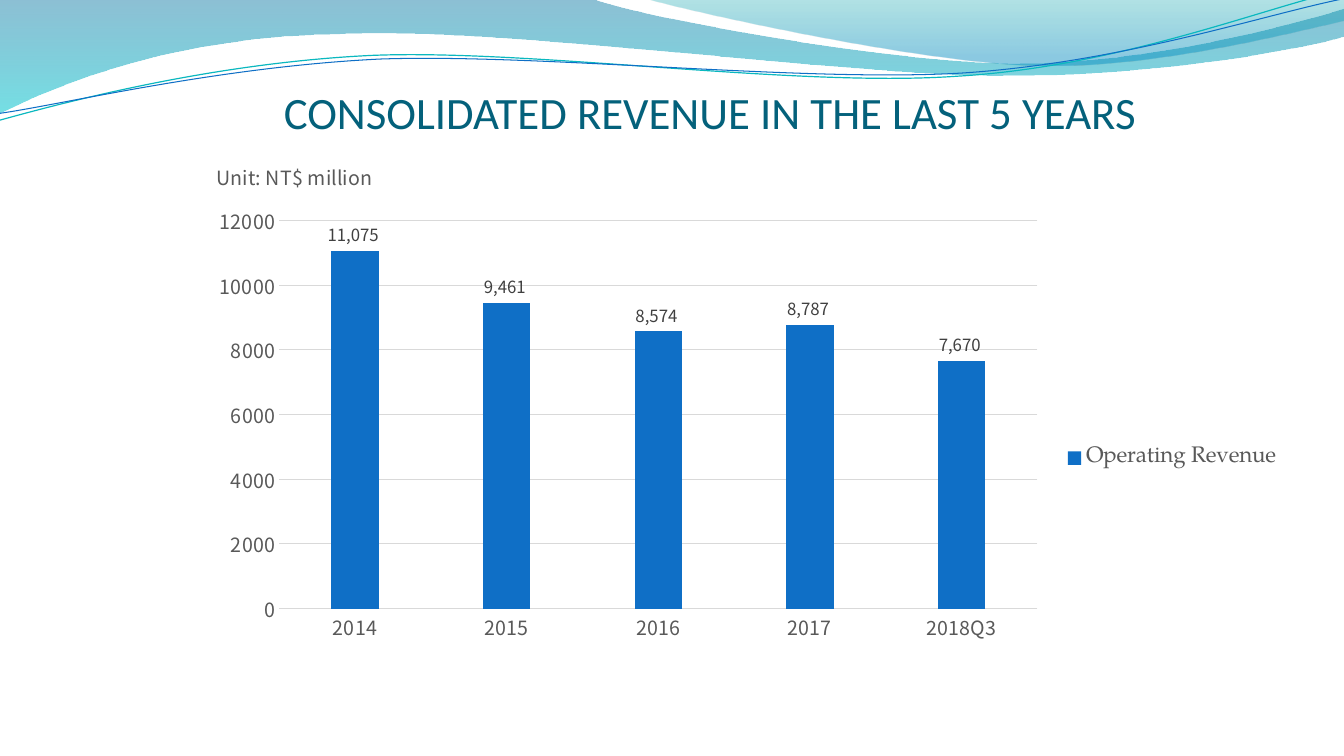
from lxml import etree
from pptx import Presentation
from pptx.chart.data import CategoryChartData
from pptx.dml.color import RGBColor
from pptx.enum.chart import XL_CHART_TYPE, XL_LABEL_POSITION, XL_LEGEND_POSITION, XL_TICK_MARK
from pptx.enum.text import MSO_ANCHOR, MSO_AUTO_SIZE, PP_ALIGN
from pptx.oxml.ns import qn
from pptx.util import Inches, Pt

CLUSTERED = XL_CHART_TYPE.COLUMN_CLUSTERED
OUTSIDE_END = XL_LABEL_POSITION.OUTSIDE_END
LEGEND_RIGHT = XL_LEGEND_POSITION.RIGHT
NO_TICK = XL_TICK_MARK.NONE
BOTTOM = MSO_ANCHOR.BOTTOM
NO_FIT = MSO_AUTO_SIZE.NONE
CENTER = PP_ALIGN.CENTER

COLUMN = ROW = Inches(1)
COLUMNS, ROWS = 13.33, 7.5
CHART_COLUMNS, CHART_ROWS = 10.84, 5.06
STRAND_ROTATION = 357.3

COLORS = {
    "title": "04617B", "bar": "0F6FC6", "text": "595959", "label": "404040",
    "grid": "D9D9D9", "black": "000000", "teal_line": "0AB8BF",
    "deep_blue": "0074A1", "aqua": "00C6CF", "teal": "00A1A9", "sky": "008BBF",
}
TITLE_FONT = "Calibri"
LABEL_FONT = "Noto Sans CJK SC"
LEGEND_FONT = "TeX Gyre Pagella"

REVENUE = {"2014": 11075, "2015": 9461, "2016": 8574, "2017": 8787, "2018Q3": 7670}

BANDS = [
    ((0, 0), [
        [(5.87, -0.01)],
        [(6.34, 0.17), (8.85, 0.63), (10.11, 0.63)],
        [(11.38, 0.63), (12.78, 0.26), (13.33, 0.09)],
        [(13.35, 0.36)],
        [(13.11, 0.44), (11.6, 0.76), (9.94, 0.75)],
        [(8.29, 0.75), (5.09, 0.28), (3.43, 0.34)],
        [(1.72, 0.36), (0.61, 0.83), (-0.01, 1.13)],
        [(0, 0)],
    ], [(0, "deep_blue", 45), (1, "aqua", 55)]),
    ((6.39, -0.01), [
        [(6.79, 0.11), (9.09, 0.62), (10.25, 0.65)],
        [(11.41, 0.69), (12.82, 0.32), (13.33, 0.21)],
        [(13.33, 0)],
        [(6.39, -0.01)],
    ], [(0, "teal", 30), (0.8, "sky", 45)]),
]
STRANDS = [
    ((-0.03, 0.88), [
        [(0.63, 0.73), (2.11, 0.41), (3.69, 0.41)],
        [(5.28, 0.42), (7.88, 0.93), (9.49, 0.89)],
        [(11.09, 0.87), (12.54, 0.36), (13.33, 0.22)],
    ], "teal_line", 0.85),
    ((-0.02, 0.81), [
        [(0.62, 0.75), (2.18, 0.45), (3.78, 0.45)],
        [(5.37, 0.47), (7.95, 0.88), (9.54, 0.86)],
        [(11.14, 0.83), (12.56, 0.42), (13.36, 0.3)],
    ], "bar", 0.75),
]


def color(name):
    return RGBColor.from_string(COLORS[name])


def style_font(font, name, size, color_name):
    font.name = name
    font.size = Pt(size)
    font.bold = False
    font.color.rgb = color(color_name)


def style_line(line, color_name, width):
    line.color.rgb = color(color_name)
    line.width = Pt(width)


def bend_segments(shape, segments):
    nodes = iter(list(shape.element.spPr.iter(qn("a:lnTo"))))
    for segment in segments:
        first, *others = [next(nodes) for _ in segment]
        if others:
            first.tag = qn("a:cubicBezTo")
        for node in others:
            first.append(node[0])
            node.getparent().remove(node)


def add_outline(slide, start, segments, close):
    points = [start] + [point for segment in segments for point in segment]
    cells = [(round(x * COLUMN), round(y * ROW)) for x, y in points]
    builder = slide.shapes.build_freeform(*cells[0], scale=1.0)
    builder.add_line_segments(cells[1:], close=close)
    shape = builder.convert_to_shape()
    bend_segments(shape, segments)
    shape.shadow.inherit = False
    return shape


def add_band(slide, start, segments, stops):
    shape = add_outline(slide, start, segments, True)
    shape.line.fill.background()
    shape.fill.gradient()
    shape.fill.gradient_angle = 270
    for stop, (position, name, _) in zip(shape.fill.gradient_stops, stops):
        stop.position = position
        stop.color.rgb = color(name)
    for node, (_, _, opacity) in zip(shape.element.spPr.iter(qn("a:srgbClr")), stops):
        etree.SubElement(node, qn("a:alpha")).set("val", str(opacity * 1000))


def add_strand(slide, start, segments, color_name, width):
    shape = add_outline(slide, start, segments, False)
    shape.rotation = STRAND_ROTATION
    shape.fill.background()
    style_line(shape.line, color_name, width)


def set_title(slide, text):
    title = slide.shapes.title
    title.left, title.top = round(2.17 * COLUMN), round(0.77 * ROW)
    title.width, title.height = round(9.75 * COLUMN), round(0.6 * ROW)
    frame = title.text_frame
    frame.auto_size = NO_FIT
    frame.vertical_anchor = BOTTOM
    frame.margin_left = frame.margin_right = frame.margin_bottom = 0
    frame.margin_top = round(0.05 * ROW)
    paragraph = frame.paragraphs[0]
    paragraph.alignment = CENTER
    run = paragraph.add_run()
    run.text = text
    style_font(run.font, TITLE_FONT, 32, "title")


def place_part(chart, tag, index, left, top, width=None, height=None):
    part = chart.element.find(".//" + qn(tag))
    for old in part.findall(qn("c:layout")):
        part.remove(old)
    layout = etree.Element(qn("c:layout"))
    manual = etree.SubElement(layout, qn("c:manualLayout"))
    settings = {"layoutTarget": "inner"} if tag == "c:plotArea" else {}
    settings.update(xMode="edge", yMode="edge", x=left / CHART_COLUMNS, y=top / CHART_ROWS)
    if width:
        settings.update(w=width / CHART_COLUMNS, h=height / CHART_ROWS)
    for name, value in settings.items():
        etree.SubElement(manual, qn("c:" + name)).set("val", str(value))
    part.insert(index, layout)


def style_axis(axis):
    axis.major_tick_mark = axis.minor_tick_mark = NO_TICK
    style_font(axis.tick_labels.font, LABEL_FONT, 14, "text")


def style_chart_texts(chart):
    style_font(chart.font, LEGEND_FONT, 10, "black")
    chart.has_title = True
    run = chart.chart_title.text_frame.paragraphs[0].add_run()
    run.text = "Unit: NT$ million"
    style_font(run.font, LABEL_FONT, 14, "text")
    chart.has_legend = True
    chart.legend.position = LEGEND_RIGHT
    chart.legend.include_in_layout = False
    style_font(chart.legend.font, LEGEND_FONT, 16, "text")


def style_bars(plot):
    plot.vary_by_categories = False
    plot.gap_width = 219
    plot.overlap = -27
    series = plot.series[0]
    series.format.fill.solid()
    series.format.fill.fore_color.rgb = color("bar")
    labels = series.data_labels
    labels.show_value = True
    labels.position = OUTSIDE_END
    labels.number_format = r"#,##0_);[Red]\(#,##0\)"
    labels.number_format_is_linked = False
    style_font(labels.font, LABEL_FONT, 12, "label")


def add_revenue_chart(slide):
    data = CategoryChartData()
    data.categories = list(REVENUE)
    data.add_series("Operating Revenue", list(REVENUE.values()))
    box = [round(cells * COLUMN) for cells in (1.96, 1.41, CHART_COLUMNS, CHART_ROWS)]
    chart = slide.shapes.add_chart(CLUSTERED, *box, data).chart
    style_chart_texts(chart)
    style_bars(chart.plots[0])
    style_axis(chart.category_axis)
    style_line(chart.category_axis.format.line, "grid", 0.75)
    style_axis(chart.value_axis)
    chart.value_axis.format.line.fill.background()
    style_line(chart.value_axis.major_gridlines.format.line, "grid", 0.75)
    place_part(chart, "c:title", 1, 0.15, 0.14)
    place_part(chart, "c:plotArea", 0, 0.81, 0.78, 7.52, 3.85)
    place_part(chart, "c:legend", 1, 8.58, 2.96, 2.17, 0.35)


def main():
    presentation = Presentation()
    presentation.slide_width = round(COLUMNS * COLUMN)
    presentation.slide_height = round(ROWS * ROW)
    slide = presentation.slides.add_slide(presentation.slide_layouts[5])
    for band in BANDS:
        add_band(slide, *band)
    for strand in STRANDS:
        add_strand(slide, *strand)
    set_title(slide, "CONSOLIDATED REVENUE IN THE LAST 5 YEARS")
    add_revenue_chart(slide)
    presentation.save("out.pptx")


if __name__ == "__main__":
    main()
